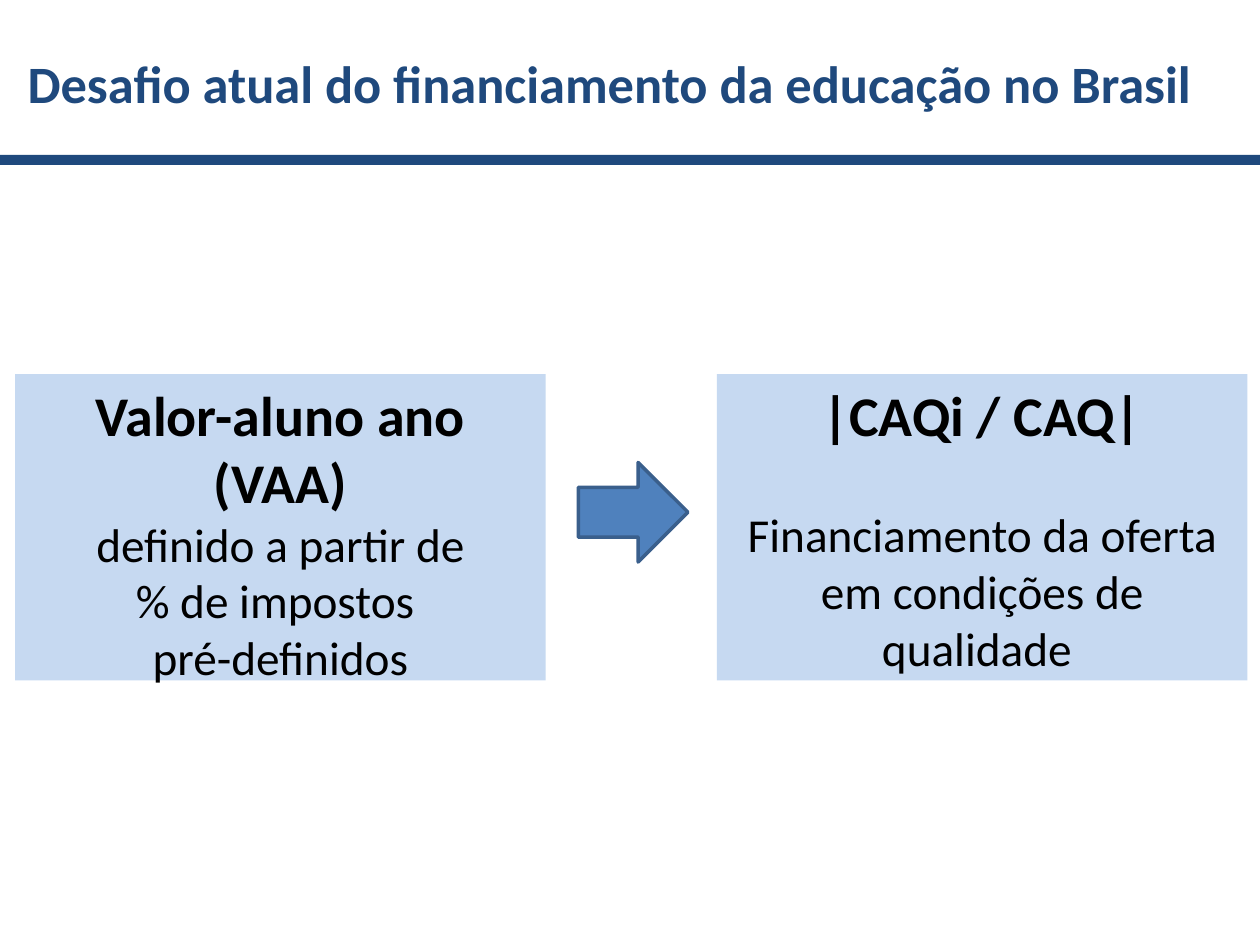
from pptx import Presentation
from pptx.dml.color import RGBColor
from pptx.enum.shapes import MSO_SHAPE
from pptx.enum.text import MSO_ANCHOR, PP_ALIGN
from pptx.util import Inches, Pt

RECTANGLE = MSO_SHAPE.RECTANGLE
RIGHT_ARROW = MSO_SHAPE.RIGHT_ARROW
TOP = MSO_ANCHOR.TOP
CENTER = PP_ALIGN.CENTER
COLORS = {
    "navy": "1F497D",
    "panel": "C6D9F1",
    "arrow": "4F81BD",
    "arrow_line": "3A5F8C",
    "text": "000000",
}


def add_filled_shape(kind, left, top, width, height, color):
    shape = slide.shapes.add_shape(
        kind, Inches(left), Inches(top), Inches(width), Inches(height)
    )
    shape.shadow.inherit = False
    shape.fill.solid()
    shape.fill.fore_color.rgb = RGBColor.from_string(COLORS[color])
    shape.line.fill.background()
    return shape


def write_paragraph(paragraph, text, size, bold, color):
    paragraph.text = text
    paragraph.font.name = "Calibri"
    paragraph.font.size = Pt(size)
    paragraph.font.bold = bold
    paragraph.font.color.rgb = RGBColor.from_string(COLORS[color])


presentation = Presentation()
presentation.slide_width = Inches(10)
presentation.slide_height = Inches(7.5)
slide = presentation.slides.add_slide(presentation.slide_layouts[6])

title = slide.shapes.add_textbox(Inches(0.12), Inches(0.36), Inches(9.78), Inches(0.63))
title.text_frame.word_wrap = True
write_paragraph(
    title.text_frame.paragraphs[0],
    "Desafio atual do financiamento da educação no Brasil",
    30, True, "navy",
)

add_filled_shape(RECTANGLE, 0, 1.23, 10, 0.08, "navy")

arrow = add_filled_shape(RIGHT_ARROW, 4.59, 3.67, 0.87, 0.79, "arrow")
arrow.line.color.rgb = RGBColor.from_string(COLORS["arrow_line"])
arrow.line.width = Pt(2)

panels = [
    (0.12, "Valor-aluno ano (VAA)", 0,
     ["definido a partir de", "% de impostos ", "pré-definidos"]),
    (5.69, "|CAQi / CAQ|", 33,
     ["Financiamento da oferta em condições de qualidade "]),
]
for left, heading, gap, lines in panels:
    panel = add_filled_shape(RECTANGLE, left, 2.97, 4.21, 2.43, "panel")
    frame = panel.text_frame
    frame.word_wrap = True
    frame.vertical_anchor = TOP
    heading_paragraph = frame.paragraphs[0]
    write_paragraph(heading_paragraph, heading, 32, True, "text")
    heading_paragraph.alignment = CENTER
    heading_paragraph.space_after = Pt(gap)
    for line in lines:
        paragraph = frame.add_paragraph()
        write_paragraph(paragraph, line, 27, False, "text")
        paragraph.alignment = CENTER

presentation.save("out.pptx")
